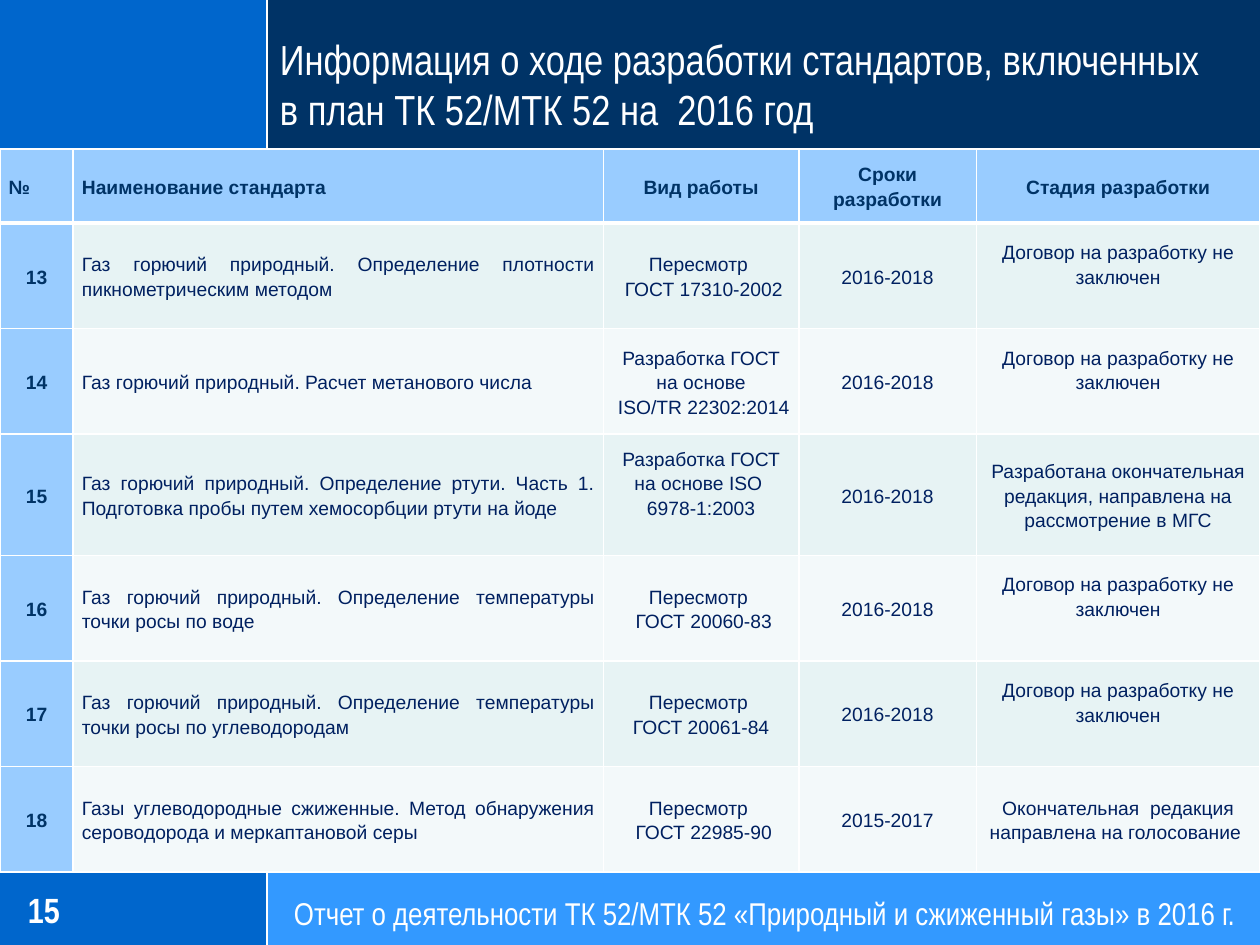
from lxml import etree
from pptx import Presentation
from pptx.dml.color import RGBColor
from pptx.enum.shapes import MSO_CONNECTOR, MSO_SHAPE
from pptx.enum.text import MSO_ANCHOR, PP_ALIGN
from pptx.oxml import parse_xml
from pptx.oxml.ns import nsdecls, qn
from pptx.util import Pt

RECT = MSO_SHAPE.RECTANGLE
STRAIGHT = MSO_CONNECTOR.STRAIGHT
MIDDLE, BOTTOM = MSO_ANCHOR.MIDDLE, MSO_ANCHOR.BOTTOM
LEFT, CENTER, JUSTIFY = PP_ALIGN.LEFT, PP_ALIGN.CENTER, PP_ALIGN.JUSTIFY

WHITE = RGBColor(0xFF, 0xFF, 0xFF)
NAVY = RGBColor(0x00, 0x33, 0x66)
BLUE = RGBColor(0x00, 0x66, 0xCC)
SKY = RGBColor(0x33, 0x99, 0xFF)
PALE = RGBColor(0x99, 0xCC, 0xFF)
INK = RGBColor(0x00, 0x20, 0x60)
BAND_DARK = RGBColor(0xE7, 0xF3, 0xF4)
BAND_LIGHT = RGBColor(0xF3, 0xF9, 0xFA)

WIDTH, HEIGHT = 720, 540
SPLIT, HEAD, FOOT = 152.6, 85, 497.5
COLS = [41.8, 303.1, 111.6, 101.5, 162]
ROWS = [42.5, 60.3, 60.3, 69.3, 60.3, 60.3, 60.3]
BLANK_LINE = 14

HEADERS = ["№", "Наименование стандарта", "Вид работы", "Сроки разработки", "Стадия разработки"]
NO_CONTRACT = "Договор на разработку не заключен"
STANDARDS = [
    ["13", "Газ горючий природный. Определение плотности пикнометрическим методом",
     "Пересмотр \n ГОСТ 17310-2002", "2016-2018", NO_CONTRACT],
    ["14", "Газ горючий природный. Расчет метанового числа",
     "Разработка ГОСТ\n на основе \n ISO/TR 22302:2014", "2016-2018", NO_CONTRACT],
    ["15", "Газ горючий природный. Определение ртути. Часть 1. Подготовка пробы путем "
     "хемосорбции ртути на йоде",
     "Разработка ГОСТ на основе ISO  6978-1:2003", "2016-2018",
     "Разработана окончательная редакция, направлена на рассмотрение в МГС"],
    ["16", "Газ горючий природный. Определение температуры точки росы по воде",
     "Пересмотр \n ГОСТ 20060-83", "2016-2018", NO_CONTRACT],
    ["17", "Газ горючий природный. Определение температуры точки росы по углеводородам",
     "Пересмотр \nГОСТ 20061-84", "2016-2018", NO_CONTRACT],
    ["18", "Газы углеводородные сжиженные. Метод обнаружения сероводорода и меркаптановой серы",
     "Пересмотр \n ГОСТ 22985-90", "2015-2017",
     "Окончательная  редакция направлена на голосование "],
]
RAISED = {NO_CONTRACT, STANDARDS[2][2]}


class Deck:
    title_font = "Arial Narrow"
    table_font = "Arial"
    table_size = 11
    spacing = 1.15
    rule = 1.25

    def __init__(self):
        self.prs = Presentation()
        self.prs.slide_width, self.prs.slide_height = Pt(WIDTH), Pt(HEIGHT)
        self.s = self.prs.slides.add_slide(self.prs.slide_layouts[6])

    def rect(self, x, y, w, h, color):
        sp = self.s.shapes.add_shape(RECT, Pt(x), Pt(y), Pt(w), Pt(h))
        sp.shadow.inherit = False
        sp.fill.solid()
        sp.fill.fore_color.rgb = color
        sp.line.fill.background()

    def line(self, x1, y1, x2, y2):
        ln = self.s.shapes.add_connector(STRAIGHT, Pt(x1), Pt(y1), Pt(x2), Pt(y2))
        ln.line.color.rgb = WHITE
        ln.line.width = Pt(self.rule)
        etree.SubElement(ln._element.spPr, qn("a:effectLst"))

    def add_text(self, tf, text, font, size, color, bold=False, align=LEFT, spacing=None):
        for i, part in enumerate(text.split("\n")):
            p = tf.add_paragraph() if i else tf.paragraphs[0]
            p.alignment = align
            p.line_spacing = spacing
            r = p.add_run()
            r.text = part
            r.font.name, r.font.size, r.font.bold = font, Pt(size), bold
            r.font.color.rgb = color

    def text(self, x, y, w, h, text, size, anchor=MIDDLE, **style):
        tf = self.s.shapes.add_textbox(Pt(x), Pt(y), Pt(w), Pt(h)).text_frame
        tf.word_wrap = True
        tf.vertical_anchor = anchor
        tf.margin_left = tf.margin_top = tf.margin_right = tf.margin_bottom = 0
        self.add_text(tf, text, self.title_font, size, WHITE, **style)

    def borders(self, cell, top, bottom):
        tcPr = cell._tc.get_or_add_tcPr()
        for side, width in zip("LRTB", (1, 1, top, bottom)):
            tcPr.append(parse_xml(
                f'<a:ln{side} {nsdecls("a")} w="{Pt(width)}"><a:solidFill>'
                f'<a:srgbClr val="{WHITE}"/></a:solidFill></a:ln{side}>'))

    def cell(self, cell, text, fill, color, bold, align, top, bottom):
        self.borders(cell, top, bottom)
        cell.fill.solid()
        cell.fill.fore_color.rgb = fill
        cell.vertical_anchor = MIDDLE
        cell.margin_left = cell.margin_right = Pt(5)
        cell.margin_top = 0
        cell.margin_bottom = Pt(BLANK_LINE if text in RAISED else 0)
        self.add_text(cell.text_frame, text, self.table_font, self.table_size,
                      color, bold, align, self.spacing)

    def table(self, x, y, cols, rows, data):
        tbl = self.s.shapes.add_table(len(rows), len(cols), Pt(x), Pt(y),
                                      Pt(sum(cols)), Pt(sum(rows))).table
        tbl.first_row = tbl.horz_banding = False
        for col, w in zip(tbl.columns, cols):
            col.width = Pt(w)
        for row, h in zip(tbl.rows, rows):
            row.height = Pt(h)
        for i, values in enumerate(data):
            for j, value in enumerate(values):
                label = i == 0 or j == 0
                fill = PALE if label else BAND_DARK if i % 2 else BAND_LIGHT
                if i == 0:
                    align = LEFT if j < 2 else CENTER
                else:
                    align = JUSTIFY if j == 1 else CENTER
                self.cell(tbl.cell(i, j), value, fill, NAVY if label else INK, label, align,
                          top=3 if i == 1 else 1, bottom=3 if i == 0 else 1)


def main():
    d = Deck()
    for y, h, right in ((FOOT, HEIGHT - FOOT, SKY), (0, HEAD, NAVY)):
        d.rect(0, y, SPLIT, h, BLUE)
        d.rect(SPLIT, y, WIDTH - SPLIT, h, right)
        d.line(SPLIT, y, SPLIT, y + h)
    for y in (FOOT, HEAD):
        d.line(0, y, WIDTH, y)
    d.text(160, 16, 559, 60.5,
           "Информация о ходе разработки стандартов, включенных\n"
           "в план ТК 52/МТК 52 на  2016 год", 24, anchor=BOTTOM)
    d.text(16, 501, 117, 37.5, "15", 20, bold=True)
    d.text(154, 503.5, 566, 36.5,
           "Отчет о деятельности ТК 52/МТК 52 «Природный и сжиженный газы» в 2016 г.",
           18, align=CENTER)
    d.table(0, HEAD, COLS, ROWS, [HEADERS] + STANDARDS)
    d.prs.save("out.pptx")


if __name__ == "__main__":
    main()
